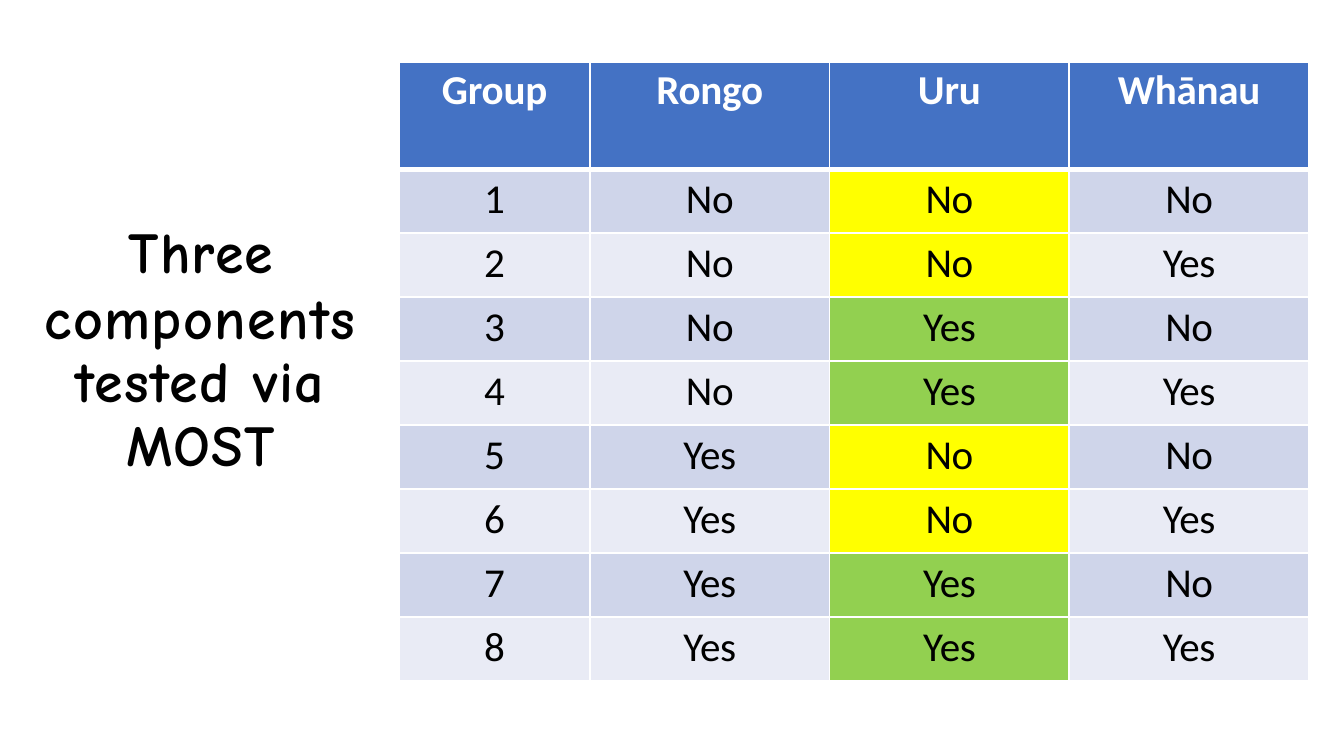
from itertools import product

from lxml.etree import SubElement
from pptx import Presentation
from pptx.dml.color import RGBColor
from pptx.enum.text import MSO_AUTO_SIZE, PP_ALIGN
from pptx.oxml.ns import qn
from pptx.util import Inches, Pt

theme = {
    "title": ("Comic Neue", 31, "000000"),
    "head": ("Calibri", 22, "FFFFFF"),
    "body": ("Calibri", 22, "000000"),
    "blue": "4472C4",
    "bands": ("CFD5EA", "E9EBF5"),
    "marks": {"No": "FFFF00", "Yes": "92D050"},
    "rule": "FFFFFF",
}


def style(para, role, bold, track, before):
    """Centre a paragraph and format its runs; track is letter spacing in points."""
    name, size, color = theme[role]
    para.alignment = PP_ALIGN.CENTER
    para.space_before = Pt(before)
    for run in para.runs:
        font = run.font
        font.name, font.size, font.bold = name, Pt(size), bold
        font.color.rgb = RGBColor.from_string(color)
        run._r.get_or_add_rPr().set("spc", str(round(track * 100)))


def border(cell, side, width):
    line = SubElement(cell._tc.get_or_add_tcPr(), qn(f"a:ln{side}"), w=str(Pt(width)))
    fill = SubElement(line, qn("a:solidFill"))
    SubElement(fill, qn("a:srgbClr"), val=theme["rule"])


deck = Presentation()
deck.slide_width = Inches(10)
deck.slide_height = Inches(10 * 9 / 16)
slide = deck.slides.add_slide(deck.slide_layouts[6])

# Title on the left
box = slide.shapes.add_textbox(Inches(0.23), Inches(1.61), Inches(2.53), Inches(1.98))
frame = box.text_frame
frame.text = "Three\ncomponents tested via MOST"
frame.word_wrap = True
frame.auto_size = MSO_AUTO_SIZE.SHAPE_TO_FIT_TEXT
frame.margin_left = frame.margin_right = frame.margin_bottom = 0
frame.margin_top = Inches(0.02)
for para, space in zip(frame.paragraphs, (Pt(35.6), 0.92)):
    style(para, "title", True, 0.8, 1.3)
    para.line_spacing = space

# Every combination of the three components
heads = ("Group", "Rongo", "Uru", "Whānau")
plans = product(("No", "Yes"), repeat=3)
rows = [heads] + [(str(num), *plan) for num, plan in enumerate(plans, 1)]

wide, high, top = 6.77, 4.61, 0.8
first = 1.42
shape = slide.shapes.add_table(
    len(rows), len(heads), Inches(2.97), Inches(0.46), Inches(wide), Inches(high)
)
table = shape.table
for col, column in enumerate(table.columns):
    column.width = Inches((wide - first) / 3 if col else first)
for row, line in enumerate(table.rows):
    line.height = Inches((high - top) / 8 if row else top)

for row, texts in enumerate(rows):
    for col, text in enumerate(texts):
        cell = table.cell(row, col)
        cell.text_frame.text = text
        cell.margin_left = cell.margin_right = cell.margin_bottom = 0
        cell.margin_top = Inches(0.04 if row else 0.03)
        para = cell.text_frame.paragraphs[0]
        if row == 0:
            color = theme["blue"]
            style(para, "head", True, -0.1, 2.5)
        else:
            band = theme["bands"][(row - 1) % 2]
            color = theme["marks"][text] if heads[col] == "Uru" else band
            style(para, "body", False, -0.2 if col else 0, 2.6)
        for side in "LRTB":
            thick = (row, side) in ((0, "B"), (1, "T"))
            border(cell, side, 3 if thick else 1)
        cell.fill.solid()
        cell.fill.fore_color.rgb = RGBColor.from_string(color)

deck.save("out.pptx")
